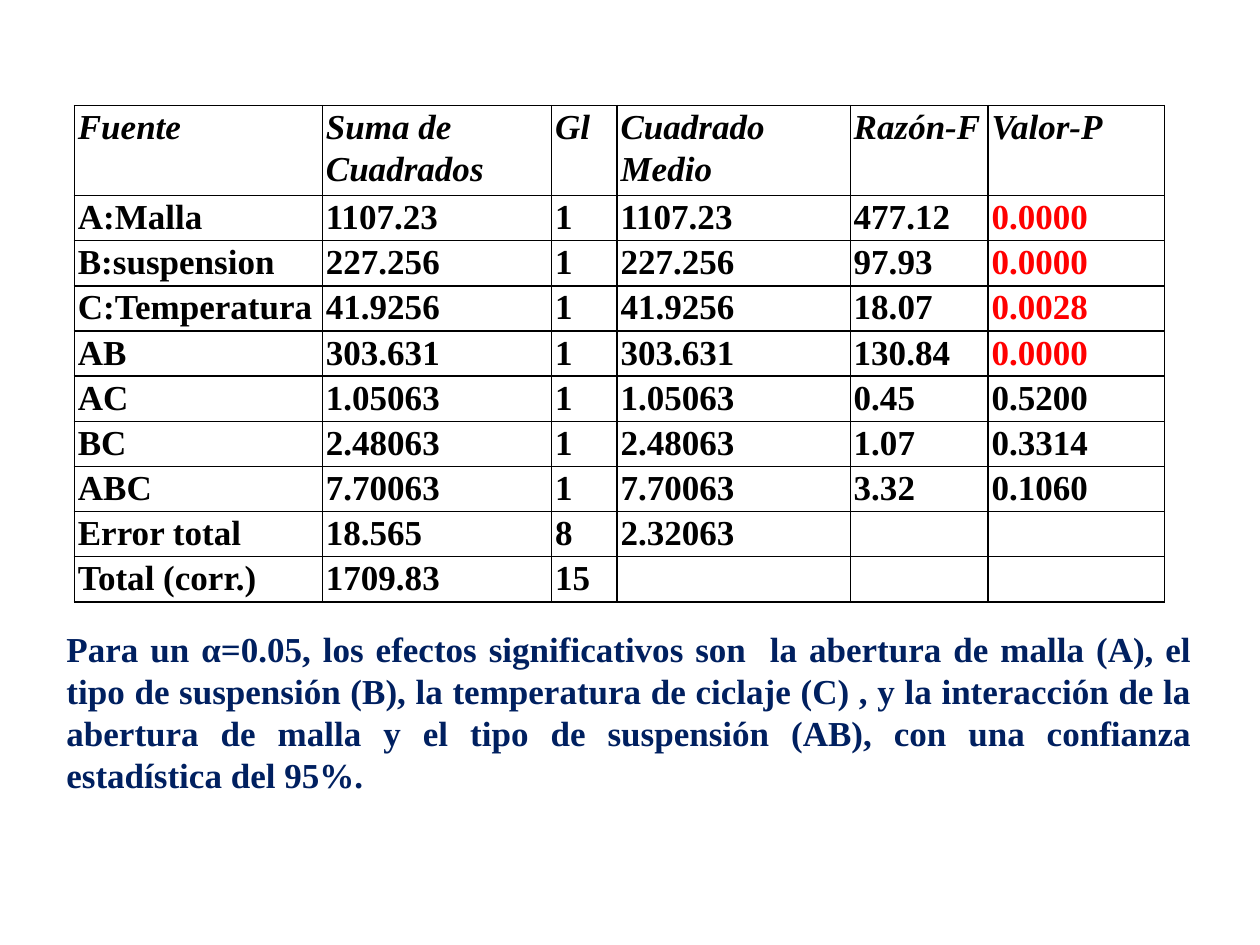
from dataclasses import dataclass

from lxml.etree import fromstring
from pptx import Presentation
from pptx.dml.color import RGBColor as Rgb
from pptx.enum.text import MSO_AUTO_SIZE as Auto, PP_ALIGN as Align
from pptx.util import Cm, Pt


@dataclass(frozen=True)
class Theme:
    font: str = "Times New Roman"
    size: int = 20
    ink: str = "000000"
    alert: str = "FF0000"
    note: str = "002060"
    rule: float = 1


THEME = Theme()
ALPHA = 0.05
WIDTHS = (5, 4.62, 1.32, 4.7, 2.78, 3.56)
HEAD = ("Fuente", "Suma de Cuadrados", "Gl", "Cuadrado Medio", "Razón-F", "Valor-P")
ROWS = (
    ("A:Malla", "1107.23", "1", "1107.23", "477.12", "0.0000"),
    ("B:suspension", "227.256", "1", "227.256", "97.93", "0.0000"),
    ("C:Temperatura", "41.9256", "1", "41.9256", "18.07", "0.0028"),
    ("AB", "303.631", "1", "303.631", "130.84", "0.0000"),
    ("AC", "1.05063", "1", "1.05063", "0.45", "0.5200"),
    ("BC", "2.48063", "1", "2.48063", "1.07", "0.3314"),
    ("ABC", "7.70063", "1", "7.70063", "3.32", "0.1060"),
    ("Error total", "18.565", "8", "2.32063", "", ""),
    ("Total (corr.)", "1709.83", "15", "", "", ""),
)
NOTE = (
    "Para un α=0.05, los efectos significativos son  la abertura de malla (A), "
    "el tipo de suspensión (B), la temperatura de ciclaje (C) , y la interacción "
    "de la abertura de malla y el tipo de suspensión (AB), con una confianza "
    "estadística del 95%."
)
NS = "http://schemas.openxmlformats.org/drawingml/2006/main"


def write(frame, text, color=THEME.ink, italic=False, align=Align.LEFT, space=None):
    para = frame.paragraphs[0]
    para.alignment = align
    para.line_spacing = space
    if not text:
        para.font.size = Pt(THEME.size)
        return
    run = para.add_run()
    run.text = text
    font = run.font
    font.name, font.size = THEME.font, Pt(THEME.size)
    font.bold, font.italic = True, italic
    font.color.rgb = Rgb.from_string(color)


def frame_cell(cell):
    cell.margin_left = cell.margin_right = Cm(0.07)
    cell.margin_top = cell.margin_bottom = 0
    cell.fill.background()
    props = cell._tc.get_or_add_tcPr()
    for spot, side in enumerate("LRTB"):
        props.insert(spot, fromstring(
            f'<a:ln{side} xmlns:a="{NS}" w="{Pt(THEME.rule)}"><a:solidFill>'
            f'<a:srgbClr val="{THEME.ink}"/></a:solidFill></a:ln{side}>'
        ))


def add_grid(slide):
    data = (HEAD, *ROWS)
    heights = [1.81] + [0.91] * len(ROWS)
    table = slide.shapes.add_table(
        len(data), len(HEAD), Cm(1.5), Cm(2.13), Cm(sum(WIDTHS)), Cm(sum(heights))
    ).table
    table.first_row = table.horz_banding = False
    for col, width in zip(table.columns, WIDTHS):
        col.width = Cm(width)
    last = len(HEAD) - 1
    for r, (row, high) in enumerate(zip(data, heights)):
        table.rows[r].height = Cm(high)
        for c, text in enumerate(row):
            cell = table.cell(r, c)
            frame_cell(cell)
            strong = r > 0 and c == last and text and float(text) < ALPHA
            color = THEME.alert if strong else THEME.ink
            write(cell.text_frame, text, color=color, italic=r == 0, space=1.07)


def add_note(slide):
    box = slide.shapes.add_textbox(Cm(1.09), Cm(12.52), Cm(23.19), Cm(3.68))
    frame = box.text_frame
    frame.word_wrap = True
    frame.auto_size = Auto.SHAPE_TO_FIT_TEXT
    write(frame, NOTE, color=THEME.note, align=Align.JUSTIFY)


def main():
    deck = Presentation()
    deck.slide_width, deck.slide_height = Cm(25.4), Cm(19.05)
    slide = deck.slides.add_slide(deck.slide_layouts[6])
    add_note(slide)
    add_grid(slide)
    deck.save("out.pptx")


if __name__ == "__main__":
    main()
